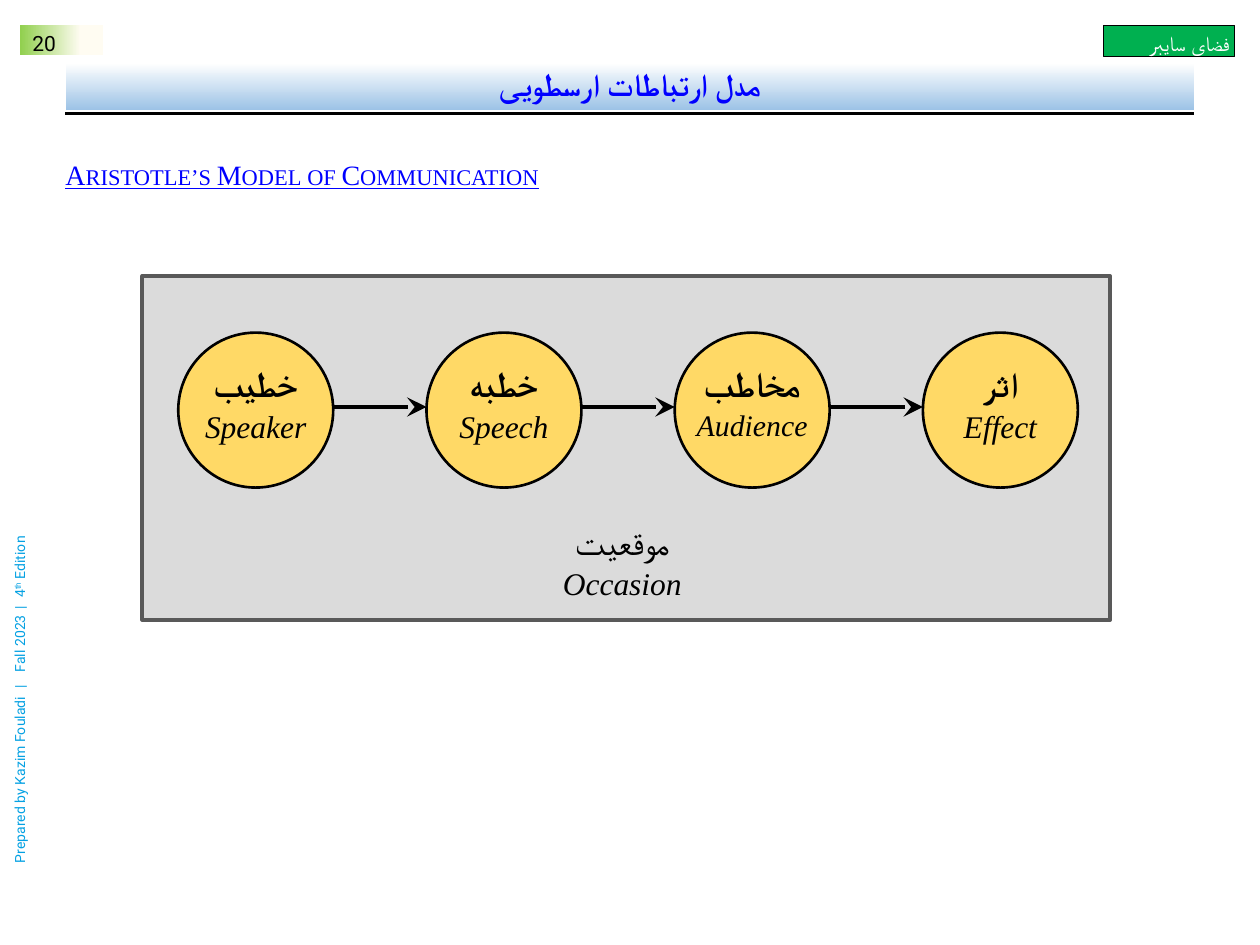
from lxml import etree
from pptx import Presentation
from pptx.dml.color import RGBColor
from pptx.enum.shapes import MSO_CONNECTOR as CONN, MSO_SHAPE as SHAPE
from pptx.enum.text import MSO_ANCHOR as ANCHOR, PP_ALIGN as ALIGN
from pptx.oxml.ns import qn
from pptx.util import Inches, Pt

BLACK = RGBColor(0x00, 0x00, 0x00)
WHITE = RGBColor(0xFF, 0xFF, 0xFF)
BLUE = RGBColor(0x00, 0x00, 0xFF)
SKY = RGBColor(0x9D, 0xC3, 0xE6)
CREAM = RGBColor(0xFF, 0xFC, 0xF2)
LIME = RGBColor(0x92, 0xD0, 0x50)
GREEN = RGBColor(0x00, 0xB0, 0x50)
CYAN = RGBColor(0x04, 0xA1, 0xE3)
PANEL = RGBColor(0xDB, 0xDB, 0xDB)
PANEL_EDGE = RGBColor(0x59, 0x59, 0x59)
GOLD = RGBColor(0xFF, 0xD9, 0x66)

SERIF = "Times New Roman"
STAGES = [("خطیب", "Speaker", 18), ("خطبه", "Speech", 18),
          ("مخاطب", "Audience", 17), ("اثر", "Effect", 18)]
FIRST_CENTER, PITCH, DIAMETER = 2.03, 1.97, 1.23
CIRCLE_TOP, ARROW_Y = 2.64, 3.23


def style_run(r, size, font, color, bold=False, italic=False):
    f = r.font
    f.size, f.name, f.bold, f.italic = Pt(size), font, bold, italic
    f.color.rgb = color
    etree.SubElement(r._r.get_or_add_rPr(), qn("a:cs"), typeface=font)


def write(sp, text, size, font, color, align=ALIGN.CENTER,
          insets=(0.1, 0.05, 0.1, 0.05), anchor=ANCHOR.TOP, **style):
    tf = sp.text_frame
    tf.word_wrap, tf.vertical_anchor = True, anchor
    (tf.margin_left, tf.margin_top,
     tf.margin_right, tf.margin_bottom) = map(Inches, insets)
    p = tf.paragraphs[0]
    p.text, p.alignment = text, align
    style_run(p.runs[0], size, font, color, **style)
    return p


def add_text(s, box, *args, **kwargs):
    return write(s.shapes.add_textbox(*map(Inches, box)), *args, **kwargs)


def add_block(s, kind, box, fill=None, line=None, width=1):
    sp = s.shapes.add_shape(kind, *map(Inches, box))
    sp.shadow.inherit = False
    if fill is not None:
        sp.fill.solid()
        sp.fill.fore_color.rgb = fill
    if line is None:
        sp.line.fill.background()
    else:
        sp.line.color.rgb = line
        sp.line.width = Pt(width)
    return sp


def fill_gradient(sp, angle, *stops):
    sp.fill.gradient()
    sp.fill.gradient_angle = angle
    for stop, (position, color) in zip(sp.fill.gradient_stops, stops):
        stop.position, stop.color.rgb = position, color


def add_line(s, x1, x2, y, width, arrow=False):
    line = s.shapes.add_connector(CONN.STRAIGHT, Inches(x1), Inches(y), Inches(x2), Inches(y))
    line.line.color.rgb = BLACK
    line.line.width = Pt(width)
    if arrow:
        etree.SubElement(line.line._get_or_add_ln(), qn("a:tailEnd"),
                         type="stealth", w="lg", len="lg")
    etree.SubElement(line._element.spPr, qn("a:effectLst"))


def add_header(s):
    add_line(s, 0.52, 9.48, 0.9, 1.5)
    number = add_block(s, SHAPE.RECTANGLE, (0.16, 0.2, 0.66, 0.24))
    fill_gradient(number, 180, (0.27, CREAM), (0.99, LIME))
    write(number, "20", 12, "Roboto", BLACK, ALIGN.LEFT, (0.1, 0.04, 0.1, 0))
    badge = add_block(s, SHAPE.RECTANGLE, (8.76, 0.2, 1.04, 0.25), GREEN, BLACK, 0.5)
    write(badge, "فضای سایبر", 12, "Arial", WHITE, ALIGN.RIGHT,
          (0.04, 0.08, 0.04, 0.05), ANCHOR.MIDDLE)


def add_title(s):
    title = s.shapes.title
    title.left, title.top, title.width, title.height = map(Inches, (0.52, 0.5, 8.96, 0.37))
    fill_gradient(title, 270, (0, WHITE), (1, SKY))
    p = write(title, "مدل ارتباطات ارسطویی", 18, "Calibri", BLUE,
              anchor=ANCHOR.MIDDLE, bold=True)
    p.line_spacing = 0.9
    p._p.get_or_add_pPr().set("rtl", "1")


def add_subtitle(s):
    p = add_text(s, (0.52, 1.23, 8.96, 0.3), "Aristotle’s Model of Communication",
                 16, SERIF, BLUE, ALIGN.LEFT, (0, 0.05, 0.1, 0.05))
    p.line_spacing = 0.9
    r = p.runs[0]
    r.font.underline = True
    r._r.get_or_add_rPr().set("cap", "small")


def add_credit(s):
    """Vertical credit line; the separators are widened by letter spacing."""
    sp = s.shapes.add_textbox(*map(Inches, (-1.32, 5.35, 2.96, 0.24)))
    sp.rotation = 270
    p = write(sp, "Prepared by Kazim Fouladi", 8, "Roboto", CYAN, ALIGN.LEFT)
    parts = [(" | ", "spc", "270"), ("Fall 2023", "spc", "0"), (" | ", "spc", "130"),
             ("4", "spc", "0"), ("th", "baseline", "30000"), (" Edition", "baseline", "0")]
    for text, attribute, value in parts:
        r = p.add_run()
        r.text = text
        style_run(r, 8, "Roboto", CYAN)
        r._r.get_or_add_rPr().set(attribute, value)


def add_label(s, center, top, persian, english, size=18, bold=True):
    """Persian word with its English translation below, both centred."""
    left, width = center - 0.63, 1.26
    add_text(s, (left, top + 0.35, width, 0.4), english, size, SERIF, BLACK, italic=True)
    add_text(s, (left, top, width, 0.44), persian, 20, "Calibri", BLACK, bold=bold)


def add_model(s):
    add_block(s, SHAPE.RECTANGLE, (1.13, 2.19, 7.68, 2.73), PANEL, PANEL_EDGE, 2.25)
    add_label(s, 4.94, 4.08, "موقعیت", "Occasion", bold=False)
    radius = DIAMETER / 2
    for i, (persian, english, size) in enumerate(STAGES):
        center = FIRST_CENTER + i * PITCH
        add_block(s, SHAPE.OVAL, (center - radius, CIRCLE_TOP, DIAMETER, DIAMETER),
                  GOLD, BLACK, 1.5)
        if i:
            add_line(s, center - PITCH + radius, center - radius, ARROW_Y, 2.25, arrow=True)
        add_label(s, center, 2.83, persian, english, size)


def main():
    prs = Presentation()
    prs.slide_width, prs.slide_height = Inches(10), Inches(7.5)
    s = prs.slides.add_slide(prs.slide_layouts[5])
    add_header(s)
    add_credit(s)
    add_title(s)
    add_subtitle(s)
    add_model(s)
    prs.save("out.pptx")


if __name__ == "__main__":
    main()
